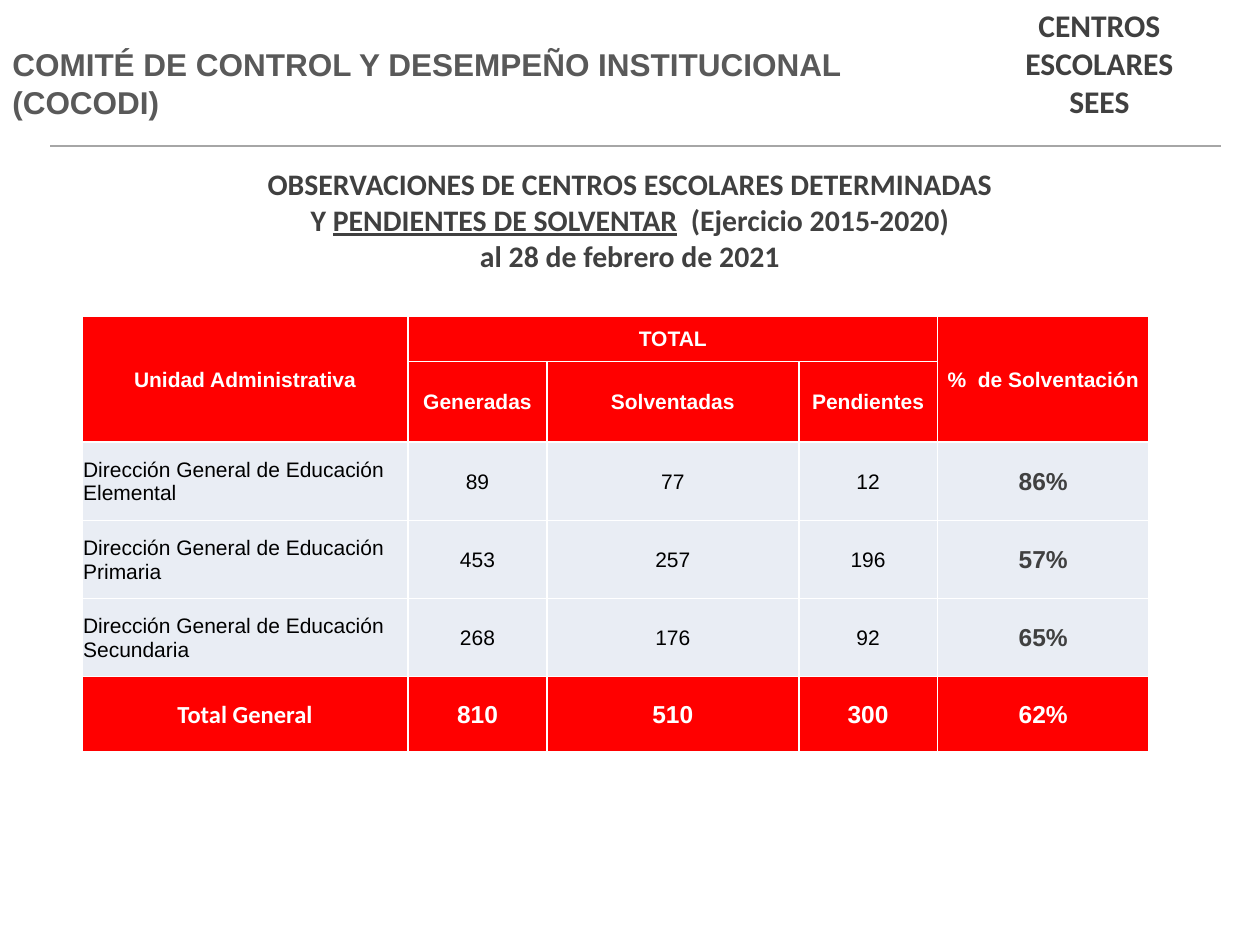
from lxml.etree import SubElement
from pptx import Presentation
from pptx.dml.color import RGBColor
from pptx.enum.shapes import MSO_CONNECTOR, MSO_SHAPE
from pptx.enum.text import MSO_ANCHOR, PP_ALIGN
from pptx.oxml.ns import qn
from pptx.util import Inches, Pt

WHITE = RGBColor(0xFF, 0xFF, 0xFF)
BLACK = RGBColor(0, 0, 0)
RED = RGBColor(0xFF, 0, 0)
PALE = RGBColor(0xE9, 0xED, 0xF4)
DARK = RGBColor(0x40, 0x40, 0x40)
GRAY = RGBColor(0x59, 0x59, 0x59)
RULE = RGBColor(0xA6, 0xA6, 0xA6)

SLIDE_W, SLIDE_H = 10, 7.5
COLS = [2.59, 1.1, 2, 1.1, 1.68]
ROWS = [0.36, 0.64, 0.62, 0.62, 0.62, 0.6]
HEADER_ROWS = 2
CELLS = [
    ["Unidad Administrativa", "TOTAL", "", "", "%  de Solventación"],
    ["", "Generadas", "Solventadas", "Pendientes", ""],
    ["Dirección General de Educación Elemental", "89", "77", "12", "86%"],
    ["Dirección General de Educación Primaria", "453", "257", "196", "57%"],
    ["Dirección General de Educación Secundaria", "268", "176", "92", "65%"],
    ["Total General", "810", "510", "300", "62%"],
]
MERGES = [((0, 0), (1, 0)), ((0, 1), (0, 3)), ((0, 4), (1, 4))]


def write(tf, *lines, size=12, font="Arial", color=DARK, bold=True,
          align=PP_ALIGN.CENTER):
    """Write one paragraph per line; text between underscores is underlined."""
    tf.word_wrap = True
    for i, line in enumerate(lines):
        p = tf.paragraphs[0] if i == 0 else tf.add_paragraph()
        p.alignment = align
        for j, piece in enumerate(line.split("_")):
            r = p.add_run()
            r.text = piece
            r.font.size = Pt(size)
            r.font.name = font
            r.font.bold = bold
            r.font.underline = j % 2 == 1
            r.font.color.rgb = color


def add_panel(s, x, y, w, h):
    sp = s.shapes.add_shape(MSO_SHAPE.RECTANGLE, Inches(x), Inches(y), Inches(w), Inches(h))
    sp.shadow.inherit = False
    sp.fill.solid()
    sp.fill.fore_color.rgb = WHITE
    sp.line.fill.background()
    sp.text_frame.vertical_anchor = MSO_ANCHOR.TOP
    return sp.text_frame


def add_subtitle(s):
    box = s.shapes.add_textbox(0, Inches(1.27), Inches(SLIDE_W), Inches(0.96))
    write(box.text_frame,
          "OBSERVACIONES DE CENTROS ESCOLARES DETERMINADAS",
          "Y _PENDIENTES DE SOLVENTAR_  (Ejercicio 2015-2020)",
          "al 28 de febrero de 2021",
          size=17, font="Calibri")


def add_rule(s, x1, x2, y):
    line = s.shapes.add_connector(MSO_CONNECTOR.STRAIGHT, Inches(x1), Inches(y),
                                  Inches(x2), Inches(y))
    line.line.color.rgb = RULE
    line.line.width = Pt(1.5)
    SubElement(line._element.spPr, qn("a:effectLst"))


def set_borders(cell):
    tc_pr = cell._tc.get_or_add_tcPr()
    for side in ("lnL", "lnR", "lnT", "lnB"):
        ln = SubElement(tc_pr, qn(f"a:{side}"), w=str(Pt(1)))
        fill = SubElement(ln, qn("a:solidFill"))
        SubElement(fill, qn("a:srgbClr"), val=str(WHITE))


def cell_format(row, col):
    """Return the text format for a header, total or body cell."""
    total = row == len(ROWS) - 1
    if row < HEADER_ROWS:
        return dict(color=WHITE)
    if total:
        return dict(color=WHITE, size=14, font="Arial" if col else "Calibri")
    if col == len(COLS) - 1:
        return dict(size=14)
    return dict(color=BLACK, bold=False,
                align=PP_ALIGN.CENTER if col else PP_ALIGN.LEFT)


def add_results(s):
    table = s.shapes.add_table(len(ROWS), len(COLS), Inches(0.65), Inches(2.51),
                               Inches(sum(COLS)), Inches(sum(ROWS))).table
    for column, width in zip(table.columns, COLS):
        column.width = Inches(width)
    for row, height in zip(table.rows, ROWS):
        row.height = Inches(height)
    for start, end in MERGES:
        table.cell(*start).merge(table.cell(*end))
    for i, texts in enumerate(CELLS):
        for j, text in enumerate(texts):
            cell = table.cell(i, j)
            body = HEADER_ROWS <= i < len(ROWS) - 1
            set_borders(cell)
            cell.fill.solid()
            cell.fill.fore_color.rgb = PALE if body else RED
            cell.vertical_anchor = MSO_ANCHOR.MIDDLE
            cell.margin_left = cell.margin_right = cell.margin_top = Inches(0.01)
            cell.margin_bottom = 0
            if text:
                write(cell.text_frame, text, **cell_format(i, j))


def main():
    prs = Presentation()
    prs.slide_width, prs.slide_height = Inches(SLIDE_W), Inches(SLIDE_H)
    s = prs.slides.add_slide(prs.slide_layouts[6])
    write(add_panel(s, 7.45, 0, 2.55, 1.01), "CENTROS", "ESCOLARES", "SEES",
          size=18, font="Calibri")
    title = add_panel(s, 0, 0, 7.76, 1.31)
    title.margin_top = Inches(0.36)
    write(title, "COMITÉ DE CONTROL Y DESEMPEÑO INSTITUCIONAL (COCODI)",
          size=18, color=GRAY, align=PP_ALIGN.LEFT)
    add_subtitle(s)
    add_results(s)
    add_rule(s, 0.4, 9.69, 1.16)
    prs.save("out.pptx")


if __name__ == "__main__":
    main()
